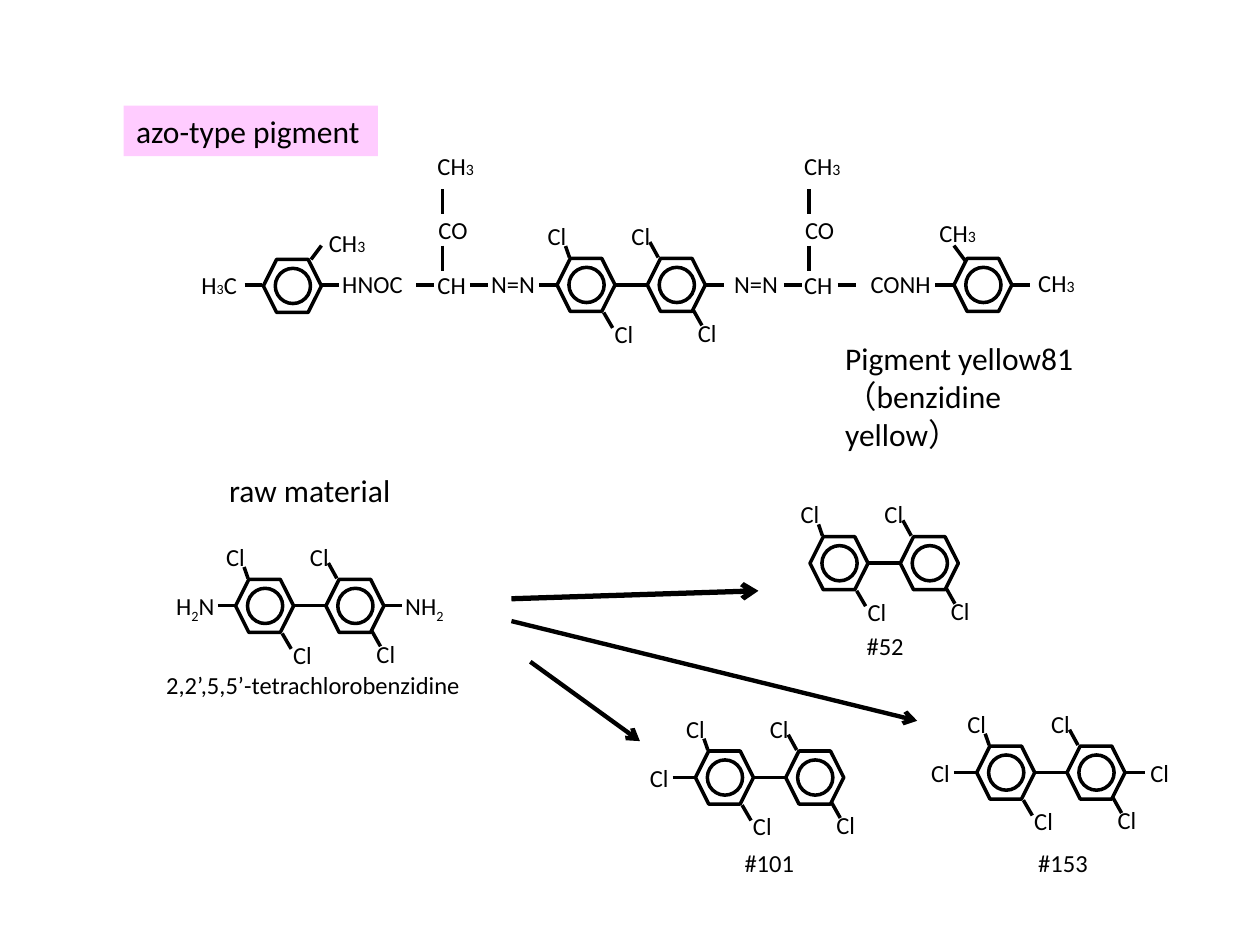
from pptx import Presentation
from pptx.dml.color import RGBColor
from pptx.enum.shapes import MSO_CONNECTOR as Connector, MSO_SHAPE as Shape
from pptx.enum.text import MSO_ANCHOR as Anchor, MSO_AUTO_SIZE as AutoSize, PP_ALIGN as Align
from pptx.oxml.ns import qn
from pptx.util import Cm, Pt
from lxml.etree import SubElement

RING_W, RING_H, CIRCLE = 1.17, 1.07, 0.71
RING_STEP = 1.82                 # from one ring of a biphenyl to the next
AXIS = 0.53                      # ring top to its middle line
BOND = 0.36
# Bond start, bond end and label corner, measured from the first ring's corner
CHLORINES = [
    ((0.17, -0.25), (0.25, -0.02), (-0.44, -0.88)),
    ((2.04, -0.02), (1.87, -0.33), (1.25, -0.88)),
    ((1.12, 1.4), (0.94, 1.09), (0.91, 1.09)),
    ((2.92, 1.35), (2.74, 1.03), (2.59, 1.07)),
]


def color(hex_string):
    return RGBColor.from_string(hex_string)


class ChemistrySlide:
    font, ink, highlight = "Calibri", "000000", "FFCCFF"

    def __init__(self, presentation):
        self.slide = presentation.slides.add_slide(presentation.slide_layouts[5])
        self.shapes = self.slide.shapes

    def start_group(self):
        self.shapes = self.slide.shapes.add_group_shape().shapes

    def end_group(self):
        self.shapes = self.slide.shapes

    def style(self, paragraph, size):
        paragraph.alignment = Align.LEFT
        paragraph.font.name = self.font
        paragraph.font.size = Pt(size)
        paragraph.font.color.rgb = color(self.ink)

    def title(self, text, x, y, w, h):
        heading = self.slide.shapes.title
        heading.left, heading.top, heading.width, heading.height = map(Cm, (x, y, w, h))
        heading.fill.solid()
        heading.fill.fore_color.rgb = color(self.highlight)
        frame = heading.text_frame
        frame.text = text
        frame.word_wrap = False
        frame.auto_size = AutoSize.NONE
        frame.vertical_anchor = Anchor.TOP
        self.style(frame.paragraphs[0], 18)

    def label(self, text, x, y, w, size=14, sub=None, wrap=False):
        """Text between bars is a subscript: of size sub, or lowered if sub is None."""
        lines = text.split("\n")
        height = len(lines) * (0.86 if size == 14 else 0.95)
        frame = self.shapes.add_textbox(Cm(x), Cm(y), Cm(w), Cm(height)).text_frame
        frame.word_wrap = wrap
        for number, line in enumerate(lines):
            paragraph = frame.add_paragraph() if number else frame.paragraphs[0]
            self.style(paragraph, size)
            for position, piece in enumerate(line.split("|")):
                if not piece:
                    continue
                run = paragraph.add_run()
                run.text = piece
                if position % 2 and sub:
                    run.font.size = Pt(sub)
                elif position % 2:
                    run.font._element.set("baseline", "-25000")

    def line(self, start, end, width=2, arrow=False):
        stroke = self.shapes.add_connector(Connector.STRAIGHT, *map(Cm, (*start, *end)))
        stroke.line.color.rgb = color(self.ink)
        stroke.line.width = Pt(width)
        if arrow:
            SubElement(stroke.line._get_or_add_ln(), qn("a:tailEnd"), type="arrow")
        SubElement(stroke._element.spPr, qn("a:effectLst"))

    def bond(self, x, y, length=BOND):
        self.line((x, y), (x + length, y))

    def ring(self, x, y):
        for kind, left, top, w, h in [
            (Shape.HEXAGON, x, y, RING_W, RING_H),
            (Shape.OVAL, x + 0.24, y + 0.18, CIRCLE, CIRCLE),
        ]:
            outline = self.shapes.add_shape(kind, Cm(left), Cm(top), Cm(w), Cm(h))
            outline.shadow.inherit = False
            outline.fill.background()
            outline.line.color.rgb = color(self.ink)
            outline.line.width = Pt(2)

    def biphenyl(self, x, y, left_bond=0, right_bond=0):
        self.ring(x, y)
        self.ring(x + RING_STEP, y)
        self.bond(x + 1.19, y + AXIS, 0.66)
        for start, end, corner in CHLORINES:
            self.line((x + start[0], y + start[1]), (x + end[0], y + end[1]))
            self.chlorine(x + corner[0], y + corner[1])
        if left_bond:
            self.bond(x - left_bond, y + AXIS, left_bond)
        if right_bond:
            self.bond(x + 3.0, y + AXIS, right_bond)

    def chlorine(self, x, y):
        self.label("Cl", x, y, 0.89)

    def methyl(self, x, y):
        self.label("CH|3|", x, y, 1.3, sub=9)

    def acetyl_branch(self, axis):
        left = axis - 0.35
        self.label("CH", left, 5.31, 1.09)
        self.label("CO", left + 0.02, 4.22, 1.12)
        self.methyl(left, 2.92)
        for top in (3.81, 4.95):
            self.line((axis, top), (axis, top + 0.51))


def main():
    presentation = Presentation()
    presentation.slide_width, presentation.slide_height = Cm(25.4), Cm(19.05)
    page = ChemistrySlide(presentation)
    page.title("azo-type pigment", 2.49, 2.13, 5.13, 1.02)
    page.label("raw material", 4.37, 9.37, 4.04, size=18)

    # Raw material
    page.start_group()
    page.biphenyl(4.75, 11.68, BOND, BOND)
    page.label("H|2|N", 3.3, 11.79, 1.32)
    page.label("NH|2|", 7.92, 11.79, 1.32)
    page.end_group()
    page.label("2,2’,5,5’-tetrachlorobenzidine", 3.1, 13.39, 6.5)

    # Pigment: central rings, acetyl branches, outer rings
    page.start_group()
    page.biphenyl(11.23, 5.21, BOND, BOND)
    for axis in (8.92, 16.31):
        page.acetyl_branch(axis)
    page.ring(5.31, 5.23)
    page.ring(19.23, 5.21)
    for x in (4.93, 6.48, 8.39, 9.47, 15.8, 16.89, 18.85, 20.4):
        page.bond(x, 5.74)
    page.line((6.48, 4.95), (6.27, 5.23))
    page.line((19.46, 5.26), (19.23, 4.95))
    for text, x, w in [("HNOC", 6.65, 1.75), ("N=N", 9.65, 1.4),
                       ("N=N", 14.55, 1.4), ("CONH", 17.3, 1.73)]:
        page.label(text, x, 5.3, w)
    page.label("H|3|C", 3.81, 5.31, 1.24, sub=8)
    for x, y in [(6.38, 4.47), (18.69, 4.27), (20.68, 5.28)]:
        page.methyl(x, y)
    page.label("Pigment yellow81\n（benzidine yellow）", 16.79, 6.71, 5.77,
               size=18, wrap=True)
    page.end_group()

    # Products: ring corner, number, number corner and width, end chlorines
    for x, y, number, number_x, number_y, w, left, right in [
        (16.33, 10.82, "#52", 17.22, 12.6, 1.27, 0, 0),
        (14.02, 15.14, "#101", 14.76, 16.97, 1.52, 0.46, 0),
        (19.69, 15.04, "#153", 20.68, 16.97, 1.52, 0.46, 0.4),
    ]:
        page.start_group()
        page.biphenyl(x, y, left, right)
        if left:
            page.chlorine(x - 1.17, y + 0.11)
        if right:
            page.chlorine(x + 3.25, y + 0.11)
        page.end_group()
        page.label(number, number_x, number_y, w)

    # Reaction arrows
    for start, end, width in [((10.31, 12.07), (15.29, 11.91), 3),
                              ((10.69, 13.34), (12.9, 14.94), 2.5),
                              ((10.31, 12.52), (18.49, 14.53), 2.5)]:
        page.line(start, end, width, arrow=True)

    presentation.save("out.pptx")


if __name__ == "__main__":
    main()
